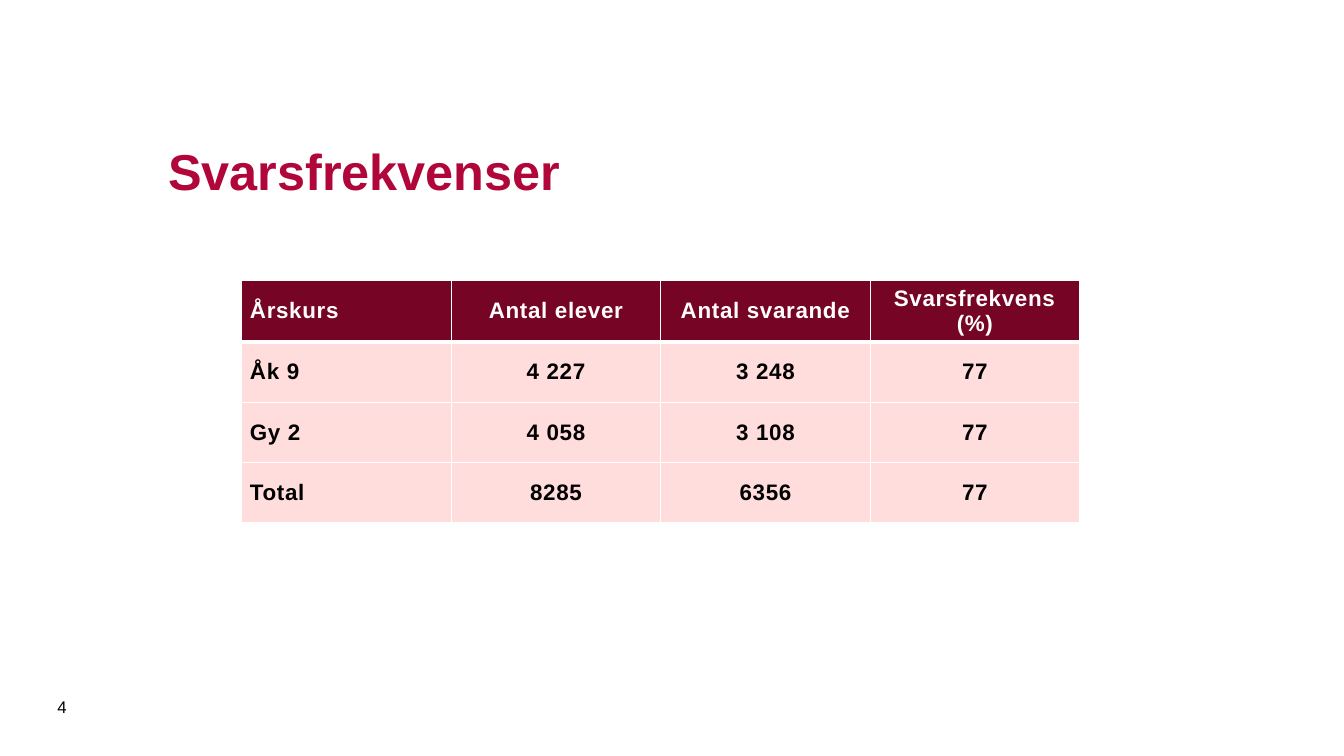
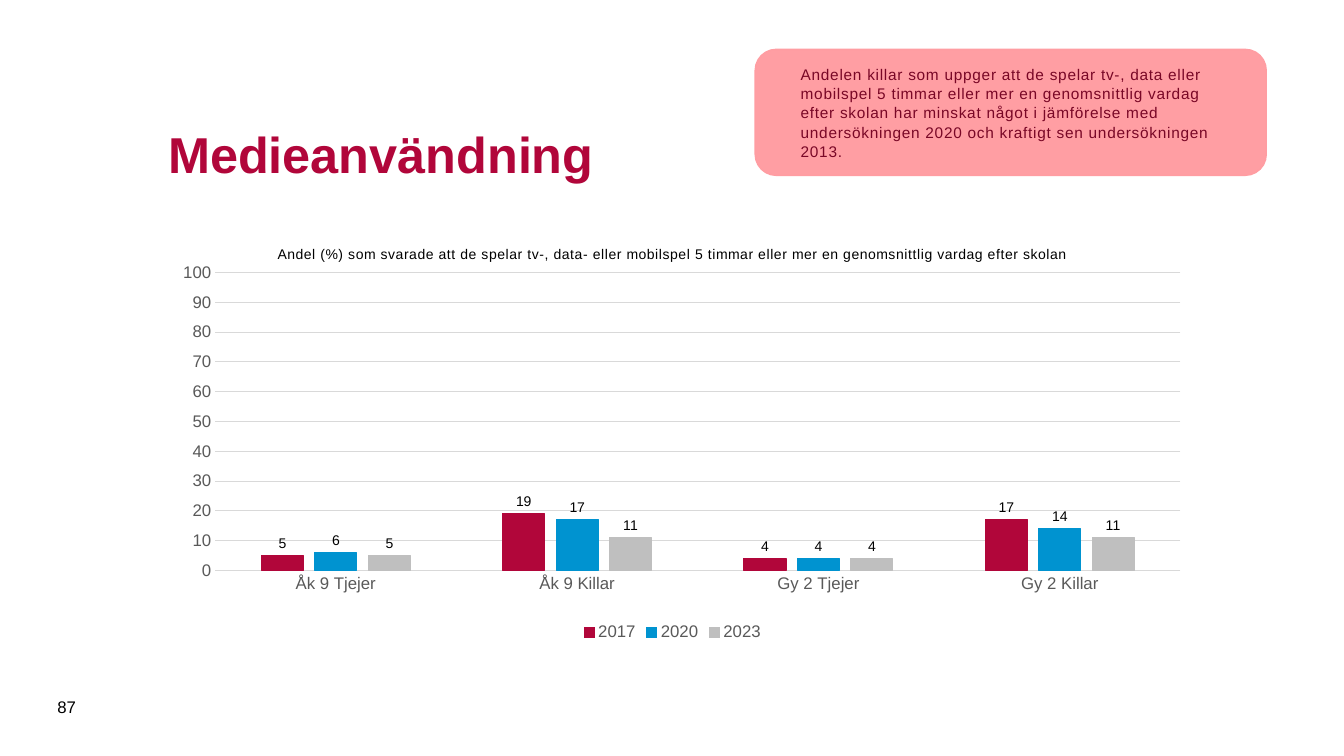
from lxml.etree import SubElement
from pptx import Presentation
from pptx.chart.data import CategoryChartData
from pptx.dml.color import RGBColor
from pptx.enum.chart import XL_CHART_TYPE, XL_LABEL_POSITION, XL_LEGEND_POSITION, XL_TICK_MARK
from pptx.enum.shapes import MSO_SHAPE
from pptx.enum.text import MSO_ANCHOR, PP_ALIGN
from pptx.oxml import parse_xml
from pptx.oxml.ns import nsdecls, qn
from pptx.util import Inches, Pt

COLORS = {
    "white": "FFFFFF", "black": "000000", "crimson": "B1063A", "wine": "760424",
    "blush": "FFDDDD", "salmon": "FF9DA2", "callout": "790726", "blue": "0093D0",
    "silver": "BFBFBF", "grid": "D9D9D9", "axis": "595959",
}


def rgb(name):
    return RGBColor.from_string(COLORS[name])


class Deck:
    font = "Arial"
    number_format = "#,##0;#,##0"

    def __init__(self):
        self.prs = Presentation()
        self.prs.slide_width, self.prs.slide_height = Inches(13.33), Inches(7.5)
        self.s = None

    def box(self, x, y, w, h):
        width, height = self.prs.slide_width, self.prs.slide_height
        return [int(share * side / 100) for share, side in
                zip((x, y, w, h), (width, height, width, height))]

    def style(self, font, size, color, bold=False):
        font.name, font.size, font.bold = self.font, Pt(size), bold
        font.color.rgb = rgb(color)

    def fill_text(self, tf, text, size, color, bold=False, spacing=0, align=PP_ALIGN.LEFT):
        p = tf.paragraphs[0]
        p.alignment = align
        r = p.add_run()
        r.text = text
        self.style(p.font, size, color, bold)
        if spacing:
            r.font._element.set("spc", str(int(spacing * 100)))
        return p

    def text(self, area, text, size, color, bold=False):
        tf = self.s.shapes.add_textbox(*self.box(*area)).text_frame
        tf.word_wrap = True
        tf.vertical_anchor = MSO_ANCHOR.MIDDLE
        self.fill_text(tf, text, size, color, bold)

    def slide(self, title, number, title_top):
        self.s = self.prs.slides.add_slide(self.prs.slide_layouts[6])
        self.text((11.78, title_top, 76.82, 18.93), title, 36, "crimson", True)
        self.text((3.53, 90.8, 4.28, 5.33), number, 12, "black")

    def border(self, cell, side, width):
        ln = SubElement(cell._tc.get_or_add_tcPr(), qn(f"a:ln{side}"), w=str(Pt(width)))
        fill = SubElement(ln, qn("a:solidFill"))
        SubElement(fill, qn("a:srgbClr"), val=COLORS["white"])

    def table(self, area, rows):
        shape = self.s.shapes.add_table(len(rows), len(rows[0]), *self.box(*area))
        for i, row in enumerate(rows):
            header = i == 0
            for j, text in enumerate(row):
                cell = shape.table.cell(i, j)
                cell.vertical_anchor = MSO_ANCHOR.MIDDLE
                cell.margin_left = cell.margin_right = Inches(0.08)
                cell.margin_top = cell.margin_bottom = Inches(0.04 if header else 0)
                widths = {"L": 1, "R": 1, "T": 3 if i == 1 else 1, "B": 3 if header else 1}
                for side, width in widths.items():
                    self.border(cell, side, width)
                cell.fill.solid()
                cell.fill.fore_color.rgb = rgb("wine" if header else "blush")
                self.fill_text(cell.text_frame, text, 16, "white" if header else "black", True,
                               0.5, PP_ALIGN.CENTER if j else PP_ALIGN.JUSTIFY)

    def callout(self, area, text):
        sp = self.s.shapes.add_shape(MSO_SHAPE.ROUNDED_RECTANGLE, *self.box(*area))
        sp.shadow.inherit = False
        sp.fill.solid()
        sp.fill.fore_color.rgb = sp.line.color.rgb = rgb("salmon")
        sp.line.width = Pt(1)
        color = sp._element.spPr.find(qn("a:solidFill")).find(qn("a:srgbClr"))
        SubElement(color, qn("a:alpha"), val="98000")
        tf = sp.text_frame
        tf.word_wrap = True
        tf.vertical_anchor = MSO_ANCHOR.MIDDLE
        tf.margin_left = tf.margin_right = Inches(0.39)
        tf.margin_top = tf.margin_bottom = Inches(0.2)
        self.fill_text(tf, text, 11, "callout", spacing=0.5).line_spacing = 1.05

    def column_chart(self, area, title, categories, series, plot_area):
        data = CategoryChartData()
        data.categories = categories
        for name, _, values in series:
            data.add_series(name, values)
        chart = self.s.shapes.add_chart(
            XL_CHART_TYPE.COLUMN_CLUSTERED, *self.box(*area), data).chart
        self.style(chart.font, 10, "black")
        self.fill_text(chart.chart_title.text_frame, title, 10, "black", spacing=0.5)
        chart.chart_title.include_in_layout = False
        chart.has_legend = True
        chart.legend.position = XL_LEGEND_POSITION.BOTTOM
        chart.legend.include_in_layout = False
        self.style(chart.legend.font, 12, "axis")

        for axis in (chart.category_axis, chart.value_axis):
            axis.major_tick_mark = axis.minor_tick_mark = XL_TICK_MARK.NONE
            self.style(axis.tick_labels.font, 12, "axis")
        value_axis = chart.value_axis
        value_axis.minimum_scale, value_axis.maximum_scale = 0, 100
        value_axis.major_unit = 10
        value_axis.tick_labels.number_format = self.number_format
        value_axis.tick_labels.number_format_is_linked = False
        value_axis.format.line.fill.background()
        for line in (chart.category_axis.format.line, value_axis.major_gridlines.format.line):
            line.color.rgb, line.width = rgb("grid"), Pt(0.75)

        plot = chart.plots[0]
        plot.vary_by_categories = False
        plot.gap_width, plot.overlap = 219, -27
        for bars, (_, color, _) in zip(plot.series, series):
            bars.format.fill.solid()
            bars.format.fill.fore_color.rgb = bars.format.line.color.rgb = rgb(color)
            bars.format.line.width = Pt(0.75)
            labels = bars.data_labels
            labels.show_value = True
            labels.position = XL_LABEL_POSITION.OUTSIDE_END
            labels.number_format, labels.number_format_is_linked = self.number_format, False
            self.style(labels.font, 10, "black")
        self.place_plot(chart, plot_area)

    def place_plot(self, chart, shares):
        settings = [("layoutTarget", "inner"), ("xMode", "edge"), ("yMode", "edge")]
        settings += [(key, share / 100) for key, share in zip("xywh", shares)]
        items = "".join(f'<c:{key} val="{value}"/>' for key, value in settings)
        layout = parse_xml(f'<c:layout {nsdecls("c")}><c:manualLayout>{items}'
                           '</c:manualLayout></c:layout>')
        plot_area = chart._chartSpace.chart.plotArea
        for old in plot_area.findall(qn("c:layout")):
            plot_area.remove(old)
        plot_area.insert(0, layout)


def main():
    deck = Deck()

    deck.slide("Svarsfrekvenser", "4", 13.07)
    deck.table((18, 37.07, 62.34, 31.87), [
        ("Årskurs", "Antal elever", "Antal svarande", "Svarsfrekvens (%)"),
        ("Åk 9", "4 227", "3 248", "77"),
        ("Gy 2", "4 058", "3 108", "77"),
        ("Total", "8285", "6356", "77"),
    ])

    deck.slide("Medieanvändning", "87", 10.8)
    deck.column_chart(
        (11.63, 30.27, 76.82, 55.07),
        "Andel (%) som svarade att de spelar tv-, data- eller mobilspel 5 timmar "
        "eller mer en genomsnittlig vardag efter skolan",
        ("Åk 9 Tjejer", "Åk 9 Killar", "Gy 2 Tjejer", "Gy 2 Killar"),
        [
            ("2017", "crimson", (5, 19, 4, 17)),
            ("2020", "blue", (6, 17, 4, 14)),
            ("2023", "silver", (5, 11, 4, 11)),
        ],
        (5.7, 10.5, 93.5, 71.6))
    deck.callout(
        (56.19, 6.53, 38.03, 16.67),
        "Andelen killar som uppger att de spelar tv-, data eller mobilspel 5 timmar "
        "eller mer en genomsnittlig vardag efter skolan har minskat något i jämförelse "
        "med undersökningen 2020 och kraftigt sen undersökningen 2013.")

    deck.prs.save("out.pptx")


if __name__ == "__main__":
    main()
